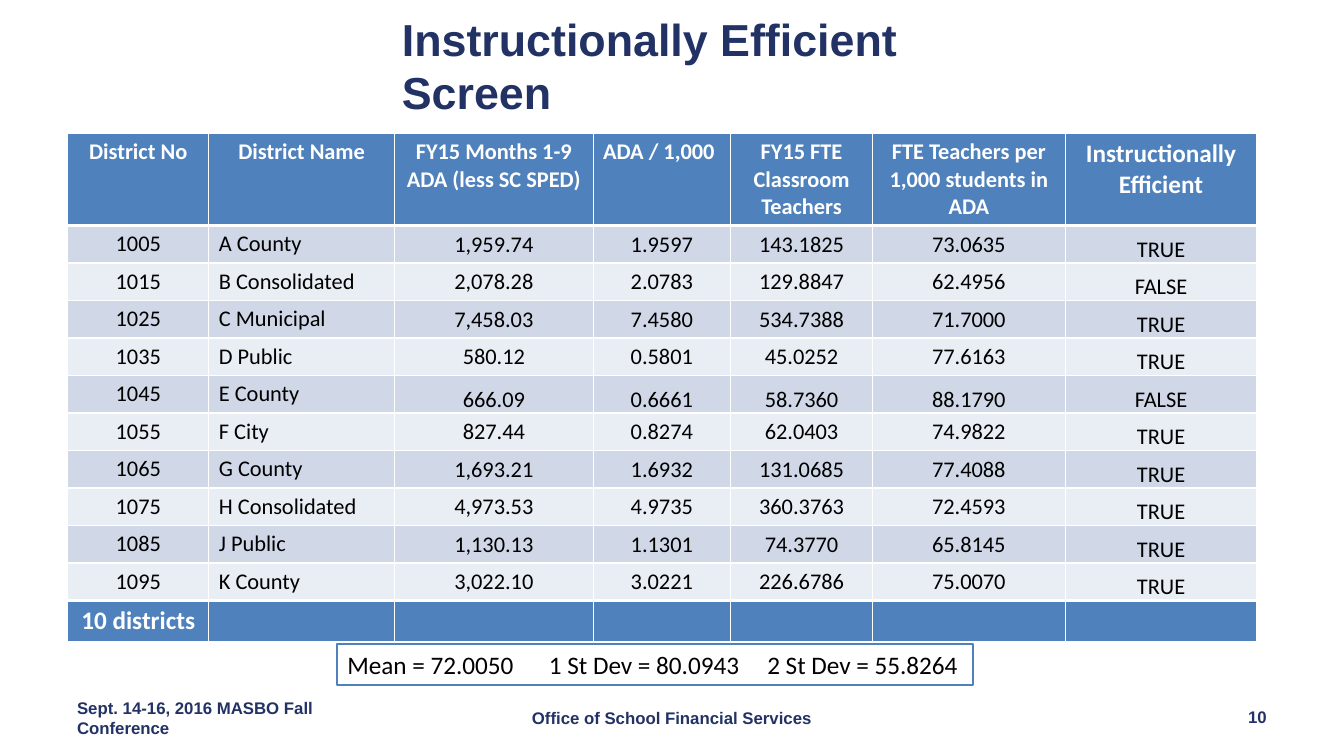
from lxml.etree import SubElement
from pptx import Presentation
from pptx.dml.color import RGBColor
from pptx.enum.shapes import MSO_SHAPE
from pptx.enum.text import MSO_ANCHOR as Anchor, PP_ALIGN as Align
from pptx.oxml.ns import qn
from pptx.util import Pt

TITLE = "Instructionally Efficient Screen"
HEADERS = ["District No", "District Name", "FY15 Months 1-9 ADA (less SC SPED)",
           "ADA / 1,000", "FY15 FTE Classroom Teachers",
           "FTE Teachers per 1,000 students in ADA", "Instructionally Efficient"]
DISTRICTS = [
    ("1005", "A County", "1,959.74", "1.9597", "143.1825", "73.0635", "TRUE"),
    ("1015", "B Consolidated", "2,078.28", "2.0783", "129.8847", "62.4956", "FALSE"),
    ("1025", "C Municipal", "7,458.03", "7.4580", "534.7388", "71.7000", "TRUE"),
    ("1035", "D Public", "580.12", "0.5801", "45.0252", "77.6163", "TRUE"),
    ("1045", "E County", "666.09", "0.6661", "58.7360", "88.1790", "FALSE"),
    ("1055", "F City", "827.44", "0.8274", "62.0403", "74.9822", "TRUE"),
    ("1065", "G County", "1,693.21", "1.6932", "131.0685", "77.4088", "TRUE"),
    ("1075", "H Consolidated", "4,973.53", "4.9735", "360.3763", "72.4593", "TRUE"),
    ("1085", "J Public", "1,130.13", "1.1301", "74.3770", "65.8145", "TRUE"),
    ("1095", "K County", "3,022.10", "3.0221", "226.6786", "75.0070", "TRUE"),
]
TOTAL = ["10 districts"] + [""] * 6
STATISTICS = "Mean = 72.0050\t1 St Dev = 80.0943\t2 St Dev = 55.8264"
STATISTICS_TABS = [144, 300]
# text, left, top, width, alignment
FOOTERS = [
    ("Sept. 14-16, 2016 MASBO Fall Conference", 48, 493, 224, Align.LEFT),
    ("Office of School Financial Services", 328, 493, 304, Align.CENTER),
    ("10", 688, 492.5, 224, Align.RIGHT),
]
COLUMN_WIDTHS = [100.8, 132.7, 141.8, 98.2, 101.4, 137.6, 137]
ROW_HEIGHTS = [62.6] + [21.6] * len(DISTRICTS) + [28.1]
TABLE_LEFT, TABLE_TOP, TABLE_HEIGHT = 48.4, 95.2, 358

NAVY = RGBColor(0x22, 0x32, 0x64)
BLUE = RGBColor(0x4F, 0x81, 0xBD)
BAND_DARK = RGBColor(0xD0, 0xD8, 0xE8)
BAND_LIGHT = RGBColor(0xE9, 0xED, 0xF4)
WHITE = RGBColor(0xFF, 0xFF, 0xFF)
BLACK = RGBColor(0, 0, 0)


def write(paragraph, text, font_name, size, color, bold=False, align=Align.LEFT):
    paragraph.alignment = align
    run = paragraph.add_run()
    run.text = text
    font = run.font
    font.name, font.size, font.bold = font_name, Pt(size), bold
    font.color.rgb = color


def add_text(slide, text, box, size, align=Align.LEFT, anchor=Anchor.TOP):
    frame = slide.shapes.add_textbox(*map(Pt, box)).text_frame
    frame.word_wrap = True
    frame.vertical_anchor = anchor
    write(frame.paragraphs[0], text, "Arial", size, NAVY, True, align)


def set_borders(cell, top, bottom):
    properties = cell._tc.get_or_add_tcPr()
    for side, width in (("L", 1), ("R", 1), ("T", top), ("B", bottom)):
        line = SubElement(properties, qn(f"a:ln{side}"), w=str(Pt(width)))
        fill = SubElement(line, qn("a:solidFill"))
        SubElement(fill, qn("a:srgbClr"), val=str(WHITE))


def add_district_table(slide):
    rows = [HEADERS, *DISTRICTS, TOTAL]
    last = len(rows) - 1
    frame = slide.shapes.add_table(
        len(rows), len(HEADERS), Pt(TABLE_LEFT), Pt(TABLE_TOP),
        Pt(sum(COLUMN_WIDTHS)), Pt(TABLE_HEIGHT))
    table = frame.table
    for column, width in zip(table.columns, COLUMN_WIDTHS):
        column.width = Pt(width)
    for row, height in zip(table.rows, ROW_HEIGHTS):
        row.height = Pt(height)
    frame.height = Pt(TABLE_HEIGHT)

    for r, values in enumerate(rows):
        is_body = 0 < r < last
        band = BAND_DARK if r % 2 else BAND_LIGHT
        for c, value in enumerate(values):
            cell = table.cell(r, c)
            set_borders(cell, 3 if r in (1, last) else 1, 3 if r in (0, last - 1) else 1)
            cell.fill.solid()
            cell.fill.fore_color.rgb = band if is_body else BLUE
            if is_body and c >= 2:
                cell.margin_left = cell.margin_right = cell.margin_top = Pt(0.7)
                cell.margin_bottom = 0
                at_bottom = c == 6 or values[0] == "1045"
                cell.vertical_anchor = Anchor.BOTTOM if at_bottom else Anchor.MIDDLE
            if value:
                is_left = (is_body and c == 1) or (r == 0 and c == 3)
                is_large = r == last or (r == 0 and c == 6)
                write(cell.text_frame.paragraphs[0], value, "Calibri",
                      18 if is_large else 16, BLACK if is_body else WHITE,
                      not is_body, Align.LEFT if is_left else Align.CENTER)


def add_statistics(slide):
    shape = slide.shapes.add_shape(
        MSO_SHAPE.RECTANGLE, Pt(241), Pt(460), Pt(454.3), Pt(29))
    shape.shadow.inherit = False
    shape.fill.background()
    shape.line.color.rgb = BLUE
    shape.line.width = Pt(1.5)
    frame = shape.text_frame
    frame.word_wrap = True
    frame.vertical_anchor = Anchor.TOP
    paragraph = frame.paragraphs[0]
    tab_list = SubElement(paragraph._p.get_or_add_pPr(), qn("a:tabLst"))
    for position in STATISTICS_TABS:
        SubElement(tab_list, qn("a:tab"), pos=str(Pt(position)), algn="l")
    write(paragraph, STATISTICS, "Calibri", 18, BLACK)


def main():
    presentation = Presentation()
    presentation.slide_width, presentation.slide_height = Pt(960), Pt(540)
    slide = presentation.slides.add_slide(presentation.slide_layouts[6])
    add_district_table(slide)
    add_text(slide, TITLE, (280, 4.5, 432, 84), 32)
    for text, left, top, width, align in FOOTERS:
        add_text(slide, text, (left, top, width, 39.6), 12, align, Anchor.MIDDLE)
    add_statistics(slide)
    presentation.save("out.pptx")


if __name__ == "__main__":
    main()
